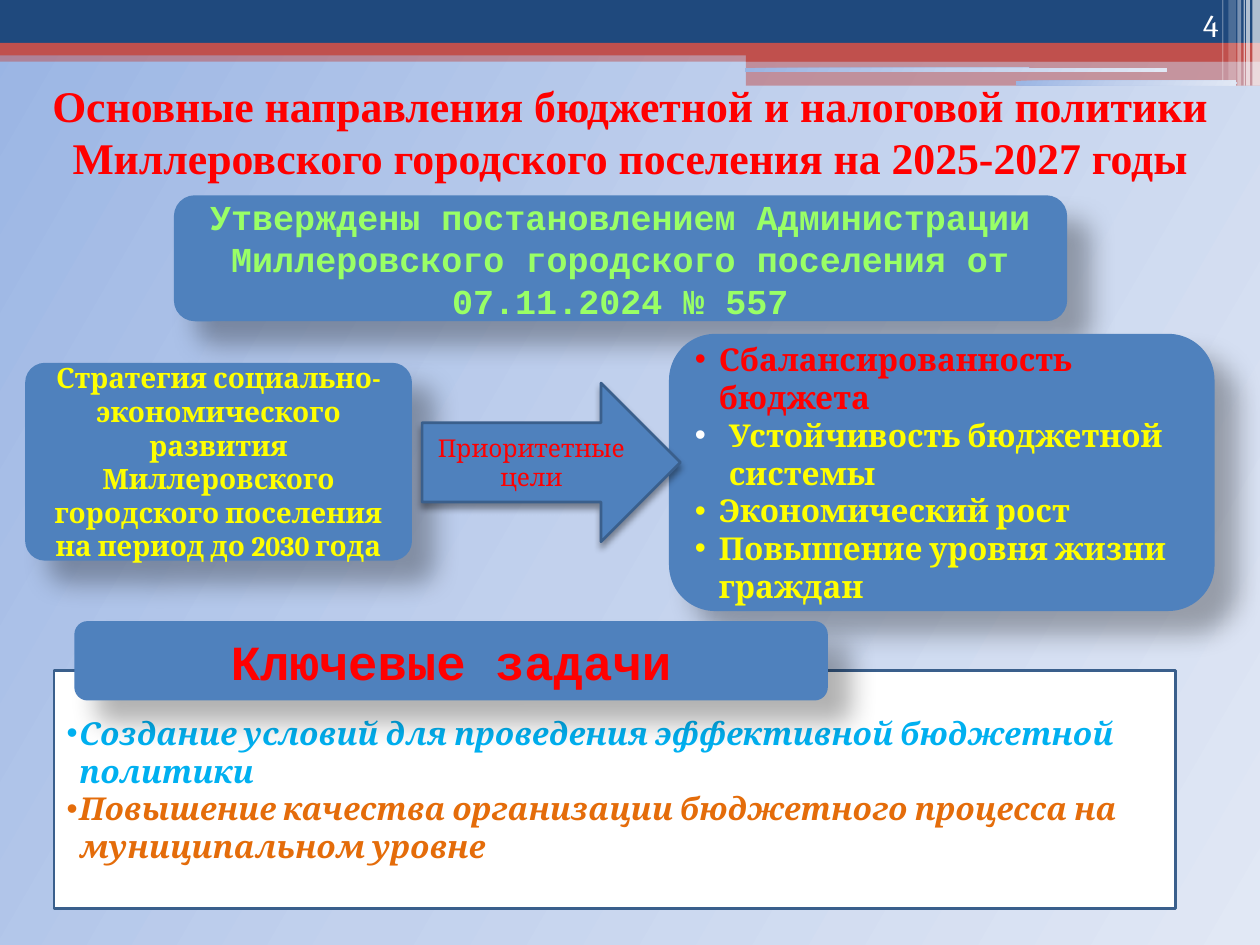
from lxml.etree import SubElement
from pptx import Presentation
from pptx.dml.color import RGBColor
from pptx.enum.shapes import MSO_SHAPE
from pptx.enum.text import MSO_ANCHOR, PP_ALIGN
from pptx.oxml.ns import qn
from pptx.util import Inches, Pt

# Content
TITLE = ("Основные направления бюджетной и налоговой политики "
         "Миллеровского городского поселения на 2025-2027 годы")
PAGE_NUMBER = "4"
DECREE = ("Утверждены постановлением Администрации Миллеровского "
          "городского поселения от 07.11.2024 № 557")
STRATEGY = ("Стратегия социально-экономического развития Миллеровского "
            "городского поселения на период до 2030 года")
PRIORITY = "Приоритетные цели"
# text, text colour, bullet colour, hanging indent in grid units
GOALS = [
    ("Сбалансированность бюджета", "red", "red", 1.9),
    ("Устойчивость бюджетной системы", "yellow", "white", 2.7),
    ("Экономический рост", "yellow", "yellow", 1.9),
    ("Повышение уровня жизни граждан", "yellow", "yellow", 1.9),
]
TASKS_HEADING = "Ключевые задачи"
TASKS = [
    ("Создание условий для проведения эффективной бюджетной политики",
     "sky", "sky", 1),
    ("Повышение качества организации бюджетного процесса на "
     "муниципальном уровне", "orange", "orange", 1),
]

COLORS = {
    "navy": "1F497D", "brick": "C0504D", "blue": "4F81BD", "edge": "3A5F8C",
    "white": "FFFFFF", "red": "FF0000", "yellow": "FFFF00", "lime": "99FF66",
    "sky": "00B0F0", "orange": "E46C0A", "black": "000000",
}
BACKDROP = [(0, "9AB5E4"), (50, "C2D1ED"), (100, "E1E8F5")]
SERIF, MONO, TIMES = "Cambria", "Courier New", "Times New Roman"

# Header decoration: left, top, width, height, colour, opacity
BANDS = [
    (0, 4, 100, 0.9, "brick", 50),
    (0, 0, 100, 3.4, "navy", 100),
    (0, 3.4, 100, 1, "brick", 100),
    (59.2, 3.9, 40.8, 1, "brick", 100),
    (59.2, 4.8, 40.8, 2, "brick", 50),
]
BARS = [(59.1, 5.4, 33.5, 0.3), (80.6, 6.4, 17.5, 0.4)]
# left, width, height, opacity
STRIPES = [
    (99.4, 0.6, 6.8, 65), (98.9, 0.3, 6.8, 65), (98.7, 0.1, 6.8, 60),
    (98.2, 0.3, 6.8, 40), (97.5, 0.6, 6.4, 20), (97, 0.1, 6.4, 30),
]
# opacity, blur, distance, direction
CARD_SHADOW = (30, 15, 18, 45)
ARROW_SHADOW = (40, 4, 3, 90)

# Slide on a grid of 100 columns by 75 rows
COLUMNS, ROWS = 100, 75
prs = Presentation()
prs.slide_width, prs.slide_height = Inches(10), Inches(7.5)
UNIT = prs.slide_width // COLUMNS
slide = prs.slides.add_slide(prs.slide_layouts[6])


def grid(*cells):
    return [round(cell * UNIT) for cell in cells]


def rgb(name):
    return RGBColor.from_string(COLORS[name])


def set_gradient(fill, owner):
    fill.gradient()
    gradient = owner.xpath(".//a:gradFill")[0]
    for child in list(gradient):
        gradient.remove(child)
    stops = SubElement(gradient, qn("a:gsLst"))
    for position, color in BACKDROP:
        stop = SubElement(stops, qn("a:gs"), pos=str(position * 1000))
        SubElement(stop, qn("a:srgbClr"), val=color)
    SubElement(gradient, qn("a:lin"), ang=str(30 * 60000), scaled="0")


def add_block(kind, box, fill=None, opacity=100, line=None, shadow=None, corner=None):
    block = slide.shapes.add_shape(kind, *grid(*box))
    block.shadow.inherit = False
    if corner is not None:
        block.adjustments[0] = corner
    if fill:
        block.fill.solid()
        block.fill.fore_color.rgb = rgb(fill)
        if opacity < 100:
            color = block._element.spPr.xpath("./a:solidFill/a:srgbClr")[0]
            SubElement(color, qn("a:alpha"), val=str(opacity * 1000))
    else:
        set_gradient(block.fill, block._element.spPr)
    if line:
        block.line.color.rgb = rgb(line)
        block.line.width = Pt(1.5)
    else:
        block.line.fill.background()
    if shadow:
        alpha, blur, distance, direction = shadow
        effects = block._element.spPr.find(qn("a:effectLst"))
        outer = SubElement(effects, qn("a:outerShdw"), blurRad=str(Pt(blur)),
                           dist=str(Pt(distance)), dir=str(direction * 60000),
                           algn="ctr", rotWithShape="0")
        color = SubElement(outer, qn("a:srgbClr"), val=COLORS["black"])
        SubElement(color, qn("a:alpha"), val=str(alpha * 1000))
    return block


def set_font(paragraph, name, size, color, bold=False, italic=False):
    font = paragraph.font
    font.name, font.size = name, Pt(size)
    font.bold, font.italic = bold, italic
    font.color.rgb = rgb(color)


def write(holder, text, *style, align=PP_ALIGN.CENTER, anchor=MSO_ANCHOR.MIDDLE):
    frame = holder.text_frame
    frame.word_wrap = True
    frame.vertical_anchor = anchor
    paragraph = frame.paragraphs[0]
    paragraph.text = text
    paragraph.alignment = align
    set_font(paragraph, *style)


def write_bullets(holder, items, size, italic=False):
    frame = holder.text_frame
    frame.word_wrap = True
    frame.vertical_anchor = MSO_ANCHOR.MIDDLE
    for index, (text, color, bullet_color, indent) in enumerate(items):
        paragraph = frame.add_paragraph() if index else frame.paragraphs[0]
        paragraph.text = text
        paragraph.alignment = PP_ALIGN.LEFT
        props = paragraph._p.get_or_add_pPr()
        hanging = round(indent * UNIT)
        props.set("marL", str(hanging))
        props.set("indent", str(-hanging))
        tint = SubElement(props, qn("a:buClr"))
        SubElement(tint, qn("a:srgbClr"), val=COLORS[bullet_color])
        SubElement(props, qn("a:buFont"), typeface="Arial")
        SubElement(props, qn("a:buChar"), char="•")
        set_font(paragraph, SERIF, size, color, True, italic)


def add_card(box, corner=None):
    return add_block(MSO_SHAPE.ROUNDED_RECTANGLE, box, "blue",
                     shadow=CARD_SHADOW, corner=corner)


# Background and header
set_gradient(slide.background.fill, slide._element)
for *box, color, opacity in BANDS:
    add_block(MSO_SHAPE.RECTANGLE, box, color, opacity)
for box in BARS:
    add_block(MSO_SHAPE.ROUNDED_RECTANGLE, box)
for left, width, height, opacity in STRIPES:
    add_block(MSO_SHAPE.RECTANGLE, (left, 0, width, height), "white", opacity)

# Title and page number
title = slide.shapes.add_textbox(*grid(0, 6, COLUMNS, 8.8))
title.text_frame.margin_top = title.text_frame.margin_bottom = 0
write(title, TITLE, TIMES, 25, "red", True)
number = slide.shapes.add_textbox(*grid(89.4, 0, 8.3, 4))
write(number, PAGE_NUMBER, SERIF, 18, "white",
      align=PP_ALIGN.RIGHT, anchor=MSO_ANCHOR.BOTTOM)

# Decree, strategy and goals
write(add_card((13.8, 15.5, 70.9, 10)), DECREE, MONO, 20, "lime", True)
write(add_card((2, 28.8, 30.7, 15.7), 0.1), STRATEGY, SERIF, 16, "yellow", True)
write_bullets(add_card((53.1, 26.5, 43.3, 22)), GOALS, 18)
arrow = add_block(MSO_SHAPE.RIGHT_ARROW, (33.5, 30.4, 20.5, 12.6), "blue",
                  line="edge", shadow=ARROW_SHADOW)
write(arrow, PRIORITY, SERIF, 14, "red")

# Key tasks
tasks = add_block(MSO_SHAPE.RECTANGLE, (4.3, 53.2, 89, 18.9), "white", line="edge")
write_bullets(tasks, TASKS, 18, italic=True)
write(add_card((5.9, 49.3, 59.8, 6.3)), TASKS_HEADING, MONO, 28, "red", True)

prs.save("out.pptx")
